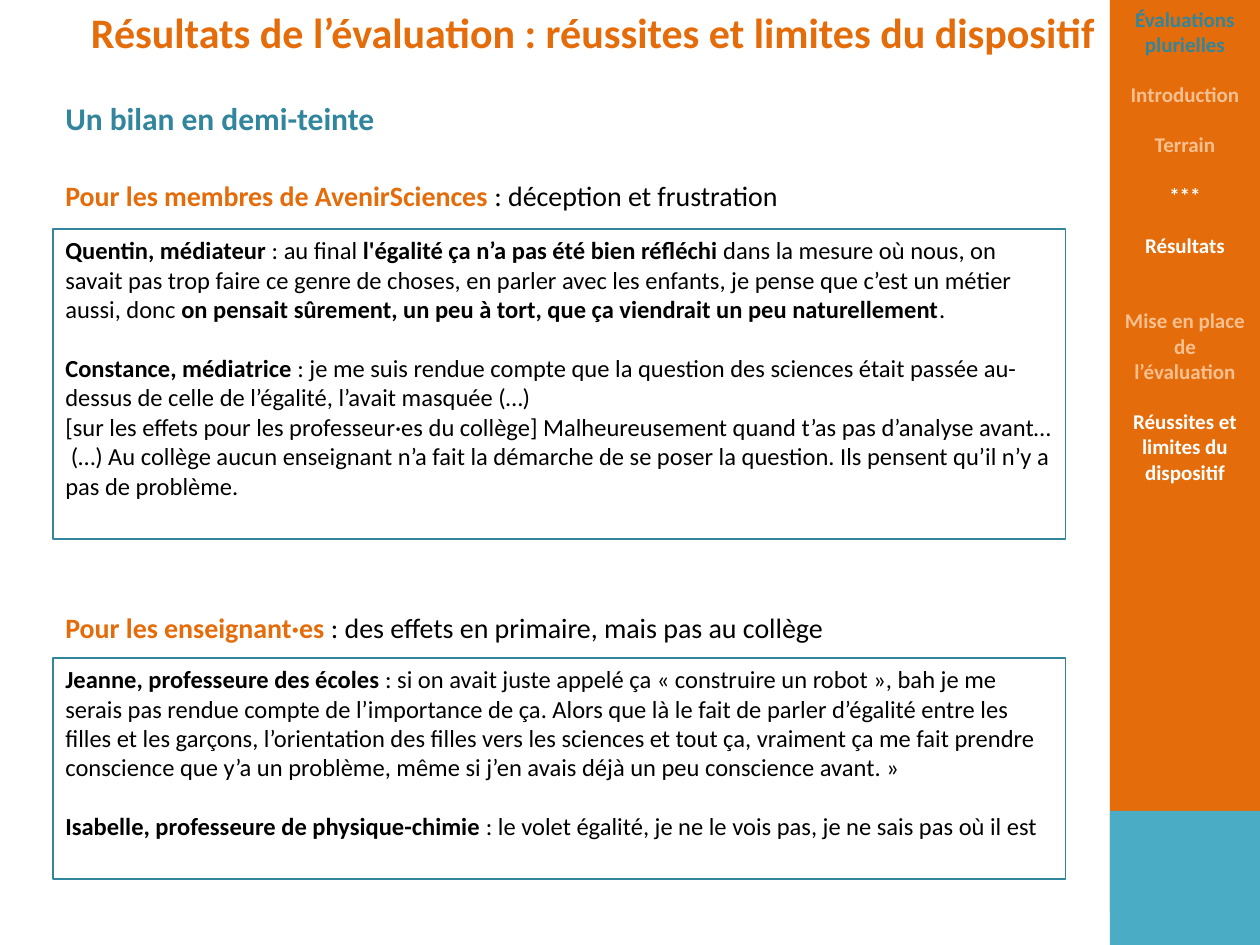
"""Build the slide on the mixed results of the evaluation."""
from pptx import Presentation, util as u
from pptx.dml.color import RGBColor
from pptx.enum import shapes, text

PX = 914400 // 126
FONT = "Calibri"
ORANGE = RGBColor(0xE4, 0x6C, 0x0A)
PEACH = RGBColor(0xFA, 0xC0, 0x90)
TEAL = RGBColor(0x31, 0x85, 0x9C)
AQUA = RGBColor(0x4B, 0xAC, 0xC6)
BLACK = RGBColor(0, 0, 0)
WHITE = RGBColor(0xFF, 0xFF, 0xFF)

# Paragraph: (space before in points, [(text, colour, bold), ...])
TITLE = [(0, [("Résultats de l’évaluation : réussites et limites du dispositif", ORANGE, True)])]
BILAN = [(0, [("Un bilan en demi-teinte", TEAL, True)])]
MEMBERS = [(0, [("Pour les membres de AvenirSciences ", ORANGE, True),
                (": déception et frustration", BLACK, False)])]
TEACHERS = [(0, [("Pour les enseignant·es ", ORANGE, True),
                 (": des effets en primaire, mais pas au collège", BLACK, False)])]
STAFF = [
    (0, [("Quentin, médiateur", BLACK, True),
         (" : au final ", BLACK, False),
         ("l'égalité ça n’a pas été bien réfléchi ", BLACK, True),
         ("dans la mesure où nous, on savait pas trop faire ce genre de choses, en parler "
          "avec les enfants, je pense que c’est un métier aussi, donc ", BLACK, False),
         ("on pensait sûrement, un peu à tort, que ça viendrait un peu naturellement", BLACK, True),
         (".", BLACK, False)]),
    (16.8, [("Constance, médiatrice", BLACK, True),
            (" : je me suis rendue compte que la question des sciences était passée "
             "au-dessus de celle de l’égalité, l’avait masquée (…)", BLACK, False)]),
    (0, [("[sur les effets pour les professeur·es du collège] Malheureusement quand t’as pas "
          "d’analyse avant…  (…) Au collège aucun enseignant n’a fait la démarche de se poser "
          "la question. Ils pensent qu’il n’y a pas de problème.", BLACK, False)]),
]
SCHOOL = [
    (0, [("Jeanne, professeure des écoles ", BLACK, True),
         (": si on avait juste appelé ça « construire un robot », bah je me serais pas rendue "
          "compte de l’importance de ça. Alors que là le fait de parler d’égalité entre les "
          "filles et les garçons, l’orientation des filles vers les sciences et tout ça, "
          "vraiment ça me fait prendre conscience que y’a un problème, même si j’en avais "
          "déjà un peu conscience avant. »", BLACK, False)]),
    (16.8, [("Isabelle, professeure de physique-chimie", BLACK, True),
            (" : le volet égalité, je ne le vois pas, je ne sais pas où il est", BLACK, False)]),
]
GAP = 14.35
MENU = [(gap, [(item, tint, True)]) for gap, item, tint in (
    (0, "Évaluations plurielles", TEAL),
    (GAP, "Introduction", PEACH),
    (GAP, "Terrain", PEACH),
    (GAP, "***", WHITE),
    (GAP, "Résultats", WHITE),
    (2 * GAP, "Mise en place de l’évaluation", PEACH),
    (GAP, "Réussites et limites du dispositif", WHITE),
)]

LEFT, WIDE = 53, 1013
SIDE, BAND = 1110, 150


def write(frame, paras, size=14, center=False, wrap=True):
    """Fill a text frame with formatted paragraphs."""
    frame.word_wrap = wrap
    frame.vertical_anchor = text.MSO_ANCHOR.TOP
    for i, (gap, runs) in enumerate(paras):
        para = frame.paragraphs[0] if i == 0 else frame.add_paragraph()
        para.alignment = text.PP_ALIGN.CENTER if center else text.PP_ALIGN.LEFT
        para.space_before = u.Pt(gap)
        for words, tint, bold in runs:
            run = para.add_run()
            run.text = words
            font = run.font
            font.name, font.size, font.bold = FONT, u.Pt(size), bold
            font.color.rgb = tint


def label(slide, spot, paras, **style):
    """Add a text box."""
    write(slide.shapes.add_textbox(*(n * PX for n in spot)).text_frame, paras, **style)


def panel(slide, spot, paras=(), fill=None, line=None, **style):
    """Add a rectangle with optional text."""
    rect = slide.shapes.add_shape(shapes.MSO_SHAPE.RECTANGLE, *(n * PX for n in spot))
    rect.shadow.inherit = False
    if fill is None:
        rect.fill.background()
    else:
        rect.fill.solid()
        rect.fill.fore_color.rgb = fill
    if line is None:
        rect.line.fill.background()
    else:
        rect.line.color.rgb = line
        rect.line.width = u.Pt(0.75)
    write(rect.text_frame, paras, **style)


def main():
    """Lay out and save the slide."""
    deck = Presentation()
    deck.slide_width, deck.slide_height = 1260 * PX, 945 * PX
    slide = deck.slides.add_slide(deck.slide_layouts[6])
    label(slide, (73, 0, 1040, 63), TITLE, size=24, center=True, wrap=False)
    label(slide, (LEFT, 93, 935, 50), BILAN, size=18)
    for top, head in ((172, MEMBERS), (604, TEACHERS)):
        label(slide, (LEFT, top, 935, 47), head, size=16)
    for top, high, quotes in ((229, 310, STAFF), (658, 221, SCHOOL)):
        panel(slide, (LEFT, top, WIDE, high), quotes, line=TEAL)
    panel(slide, (SIDE, 0, BAND, 912), MENU, fill=ORANGE, size=12, center=True)
    panel(slide, (SIDE, 811, BAND, 134), fill=AQUA)
    deck.save("out.pptx")


if __name__ == "__main__":
    main()
